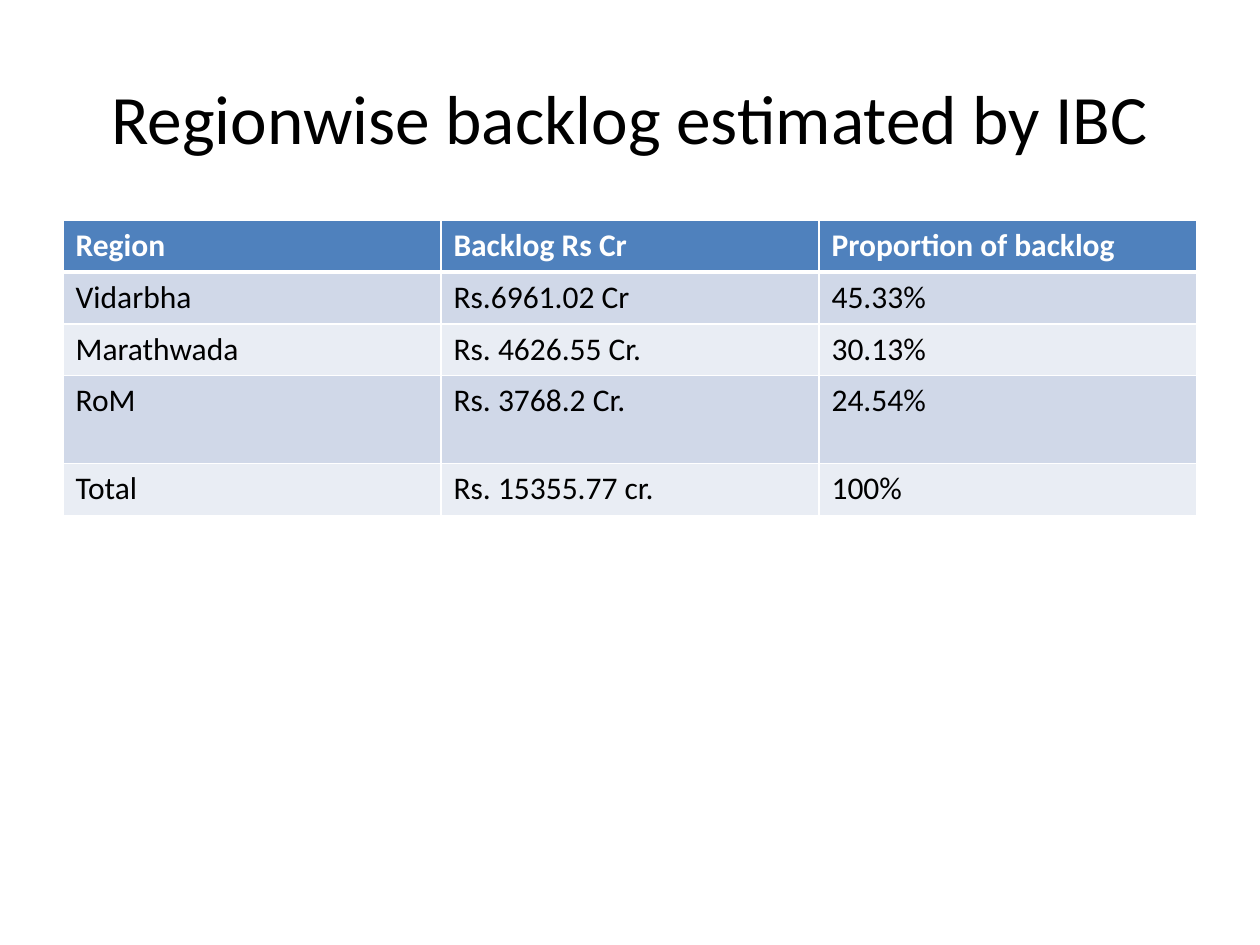
from lxml.etree import SubElement
from pptx import Presentation
from pptx.dml.color import RGBColor
from pptx.enum.text import MSO_ANCHOR, PP_ALIGN
from pptx.oxml.ns import qn
from pptx.util import Inches, Pt

WHITE = RGBColor(0xFF, 0xFF, 0xFF)
BLACK = RGBColor(0x00, 0x00, 0x00)
BLUE = RGBColor(0x4F, 0x81, 0xBD)
BANDS = (RGBColor(0xE9, 0xED, 0xF4), RGBColor(0xD0, 0xD8, 0xE8))

TITLE = {"name": "Calibri", "size": Pt(39.6), "bold": False}
HEAD = {"name": "Calibri", "size": Pt(18), "bold": True}
BODY = {**HEAD, "bold": False}

ROWS = [
    ("Region", "Backlog Rs Cr", "Proportion of backlog"),
    ("Vidarbha", "Rs.6961.02 Cr", "45.33%"),
    ("Marathwada", "Rs. 4626.55 Cr.", "30.13%"),
    ("RoM", "Rs. 3768.2 Cr.", "24.54%"),
    ("Total", "Rs. 15355.77 cr.", "100%"),
]
HEIGHTS = (0.41, 0.41, 0.41, 0.7, 0.41)


class Deck:
    def __init__(self, slide):
        self.slide = slide

    def label(self, frame, text, style, color):
        run = frame.paragraphs[0].add_run()
        run.text = text
        for key, value in style.items():
            setattr(run.font, key, value)
        run.font.color.rgb = color

    def title(self, text, *box):
        frame = self.slide.shapes.add_textbox(*map(Inches, box)).text_frame
        frame.word_wrap = True
        frame.vertical_anchor = MSO_ANCHOR.MIDDLE
        frame.paragraphs[0].alignment = PP_ALIGN.CENTER
        self.label(frame, text, TITLE, BLACK)

    def border(self, cell, widths):
        props = cell._tc.get_or_add_tcPr()
        for side, width in widths.items():
            line = SubElement(props, qn(f"a:ln{side}"), w=str(Pt(width)))
            fill = SubElement(line, qn("a:solidFill"))
            SubElement(fill, qn("a:srgbClr"), val=str(WHITE))

    def table(self, rows, heights, left, top, width):
        box = map(Inches, (left, top, width, sum(heights)))
        table = self.slide.shapes.add_table(len(rows), len(rows[0]), *box).table
        for r, (texts, height) in enumerate(zip(rows, heights)):
            table.rows[r].height = Inches(height)
            style, color, back = (BODY, BLACK, BANDS[r % 2]) if r else (HEAD, WHITE, BLUE)
            widths = {"L": 1, "R": 1, "T": 3 if r == 1 else 1, "B": 1 if r else 3}
            for c, text in enumerate(texts):
                cell = table.cell(r, c)
                self.border(cell, widths)
                cell.fill.solid()
                cell.fill.fore_color.rgb = back
                self.label(cell.text_frame, text, style, color)


def main():
    prs = Presentation()
    prs.slide_width, prs.slide_height = Inches(10), Inches(7.5)
    deck = Deck(prs.slides.add_slide(prs.slide_layouts[6]))
    deck.title("Regionwise backlog estimated by IBC", 0.5, 0.3, 9, 1.25)
    deck.table(ROWS, HEIGHTS, 0.5, 1.75, 9)
    prs.save("out.pptx")


if __name__ == "__main__":
    main()
